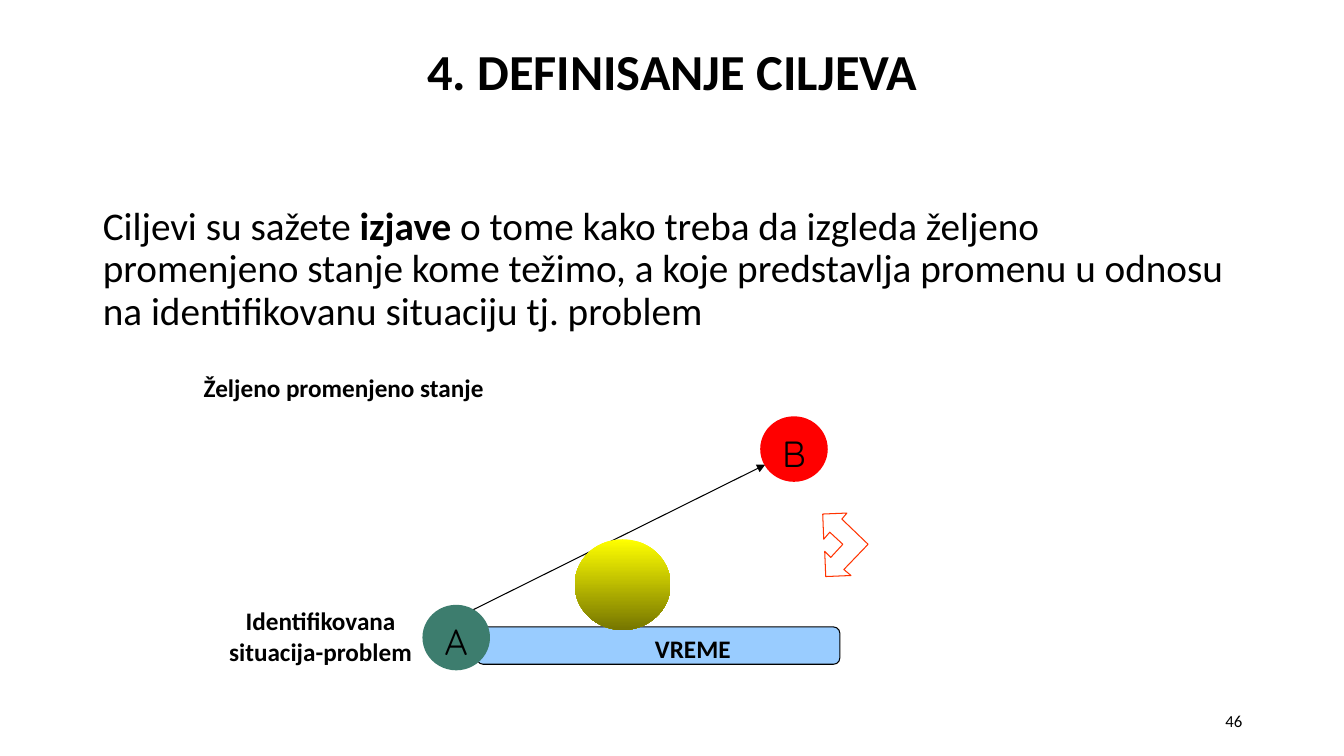
from dataclasses import dataclass

import pptx
import pptx.dml.color
import pptx.enum.dml
import pptx.enum.shapes
import pptx.enum.text
import pptx.oxml
import pptx.oxml.ns
import pptx.util
from lxml import etree

Inches = pptx.util.Inches
Pt = pptx.util.Pt
Align = pptx.enum.text.PP_ALIGN
Anchor = pptx.enum.text.MSO_ANCHOR
Preset = pptx.enum.shapes.MSO_SHAPE


@dataclass(frozen=True)
class Theme:
    text_font: str = "Calibri"
    mark_font: str = "Quicksand"
    ink: str = "000000"
    paper: str = "FFFFFF"
    time_bar: str = "99CCFF"
    start: str = "3D7D6E"
    goal: str = "FF0000"
    arrow: str = "FF3300"
    ball_top: str = "FFFF00"
    ball_bottom: str = "767600"
    title_size: int = 36
    body_size: int = 28
    mark_size: int = 26
    label_size: int = 18
    number_size: int = 12
    line_width: float = 0.75


@dataclass(frozen=True)
class Box:
    left: float
    top: float
    width: float
    height: float

    def inner(self, left, top, width, height):
        return Box(self.left + left, self.top + top, width, height)

    def lengths(self):
        return [Inches(value) for value in (self.left, self.top, self.width, self.height)]


THEME = Theme()


def colour(code):
    return pptx.dml.color.RGBColor.from_string(code)


def add_span(para, text, size, bold=False, font=THEME.text_font):
    span = para.add_run()
    span.text = text
    span.font.name = font
    span.font.size = Pt(size)
    span.font.bold = bold
    span.font.color.rgb = colour(THEME.ink)


def indent(para, inches):
    properties = para._p.get_or_add_pPr()
    properties.set("marL", str(Inches(inches)))
    properties.set("indent", "0")
    return properties


def place(shape, box):
    shape.left, shape.top, shape.width, shape.height = box.lengths()


def paint(shape, fill, line=None):
    shape.shadow.inherit = False
    shape.fill.solid()
    shape.fill.fore_color.rgb = colour(fill)
    if line:
        shape.line.color.rgb = colour(line)
        shape.line.width = Pt(THEME.line_width)
    else:
        shape.line.fill.background()


def add_title(page, box):
    title = page.shapes.title
    place(title, box)
    frame = title.text_frame
    frame.auto_size = pptx.enum.text.MSO_AUTO_SIZE.NONE
    frame.vertical_anchor = Anchor.MIDDLE
    para = frame.paragraphs[0]
    para.alignment = Align.CENTER
    para.line_spacing = 0.9
    add_span(para, "4. DEFINISANJE CILJEVA", THEME.title_size, True)


def add_body(page, box):
    body = page.placeholders[1]
    place(body, box)
    frame = body.text_frame
    frame.auto_size = pptx.enum.text.MSO_AUTO_SIZE.NONE
    definition, goal = frame.paragraphs[0], frame.add_paragraph()
    for para, left, before in ((definition, 0, 10), (goal, 1, 30)):
        para.alignment = Align.LEFT
        para.line_spacing = 0.9
        para.space_before = Pt(before)
        etree.SubElement(indent(para, left), pptx.oxml.ns.qn("a:buNone"))
    add_span(definition, "Ciljevi su sažete ", THEME.body_size)
    add_span(definition, "izjave", THEME.body_size, True)
    add_span(
        definition,
        " o tome kako treba da izgleda željeno promenjeno stanje kome težimo, "
        "a koje predstavlja promenu u odnosu na identifikovanu situaciju tj. problem",
        THEME.body_size,
    )
    add_span(goal, "Željeno promenjeno stanje", THEME.label_size, True)


def add_text(page, box, text, size, bold, align, anchor):
    frame = page.shapes.add_textbox(*box.lengths()).text_frame
    frame.word_wrap = True
    frame.vertical_anchor = anchor
    para = frame.paragraphs[0]
    para.alignment = align
    add_span(para, text, size, bold)


def add_time_bar(page, box):
    bar = page.shapes.add_shape(Preset.ROUNDED_RECTANGLE, *box.lengths())
    paint(bar, THEME.time_bar, THEME.ink)
    bar.text_frame.vertical_anchor = Anchor.TOP
    para = bar.text_frame.paragraphs[0]
    para.alignment = Align.LEFT
    indent(para, 1.65)
    add_span(para, "VREME", THEME.label_size, True)


def add_path(page, box):
    right, bottom = box.left + box.width, box.top + box.height
    path_line = page.shapes.add_connector(
        pptx.enum.shapes.MSO_CONNECTOR.STRAIGHT,
        Inches(box.left), Inches(bottom), Inches(right), Inches(box.top),
    )
    path_line.line.color.rgb = colour(THEME.ink)
    path_line.line.width = Pt(THEME.line_width)
    tail = etree.SubElement(path_line.line._get_or_add_ln(), pptx.oxml.ns.qn("a:tailEnd"))
    tail.set("type", "triangle")
    etree.SubElement(path_line._element.spPr, pptx.oxml.ns.qn("a:effectLst"))


def add_bent_arrow(page, box):
    corners = [
        (0, 0.01), (0.01, 0.26), (0.07, 0.19), (0.2, 0.31), (0.08, 0.44), (0.02, 0.38),
        (0.03, 0.63), (0.28, 0.62), (0.21, 0.56), (0.45, 0.31), (0.19, 0.06), (0.24, 0),
    ]
    points = [(Inches(box.left + x), Inches(box.top + y)) for x, y in corners]
    builder = page.shapes.build_freeform(*points[0])
    builder.add_line_segments(points[1:], close=True)
    paint(builder.convert_to_shape(), THEME.paper, THEME.arrow)


def add_mark(page, box, letter, fill):
    mark = page.shapes.add_shape(Preset.OVAL, *box.lengths())
    paint(mark, fill)
    frame = mark.text_frame
    frame.margin_left = frame.margin_right = 0
    frame.vertical_anchor = Anchor.TOP
    para = frame.paragraphs[0]
    para.alignment = Align.CENTER
    add_span(para, letter, THEME.mark_size, font=THEME.mark_font)


def add_ball(page, box):
    ball = page.shapes.add_shape(Preset.OVAL, *box.lengths())
    paint(ball, THEME.ball_top)
    ball.fill.gradient()
    ball.fill.gradient_angle = 270
    for stop, code, position in zip(
        ball.fill.gradient_stops, (THEME.ball_top, THEME.ball_bottom), (0, 1)
    ):
        stop.color.rgb = colour(code)
        stop.position = position


def add_diagram(page, box):
    add_time_bar(page, box.inner(2.77, 2.09, 3.6, 0.37))
    add_path(page, box.inner(2.51, 0.48, 3.12, 1.55))
    add_bent_arrow(page, box.inner(6.2, 0.96, 0.45, 0.63))
    add_mark(page, box.inner(2.23, 1.87, 0.67, 0.65), "A", THEME.start)
    add_mark(page, box.inner(5.58, 0, 0.67, 0.65), "B", THEME.goal)
    add_ball(page, box.inner(3.74, 1.22, 0.95, 0.9))
    add_text(page, box.inner(0, 1.83, 2.44, 0.71), "Identifikovana situacija-problem",
             THEME.label_size, True, Align.CENTER, Anchor.TOP)


def main():
    deck = pptx.Presentation()
    deck.slide_width, deck.slide_height = Inches(13.33), Inches(7.5)
    page = deck.slides.add_slide(deck.slide_layouts[1])
    add_title(page, Box(0.92, 0.4, 11.5, 0.68))
    add_body(page, Box(0.92, 2, 11.5, 4.76))
    add_diagram(page, Box(1.96, 4.13, 6.65, 2.54))
    add_text(page, Box(9.42, 6.95, 3, 0.4), "46",
             THEME.number_size, False, Align.RIGHT, Anchor.MIDDLE)
    deck.save("out.pptx")


if __name__ == "__main__":
    main()
